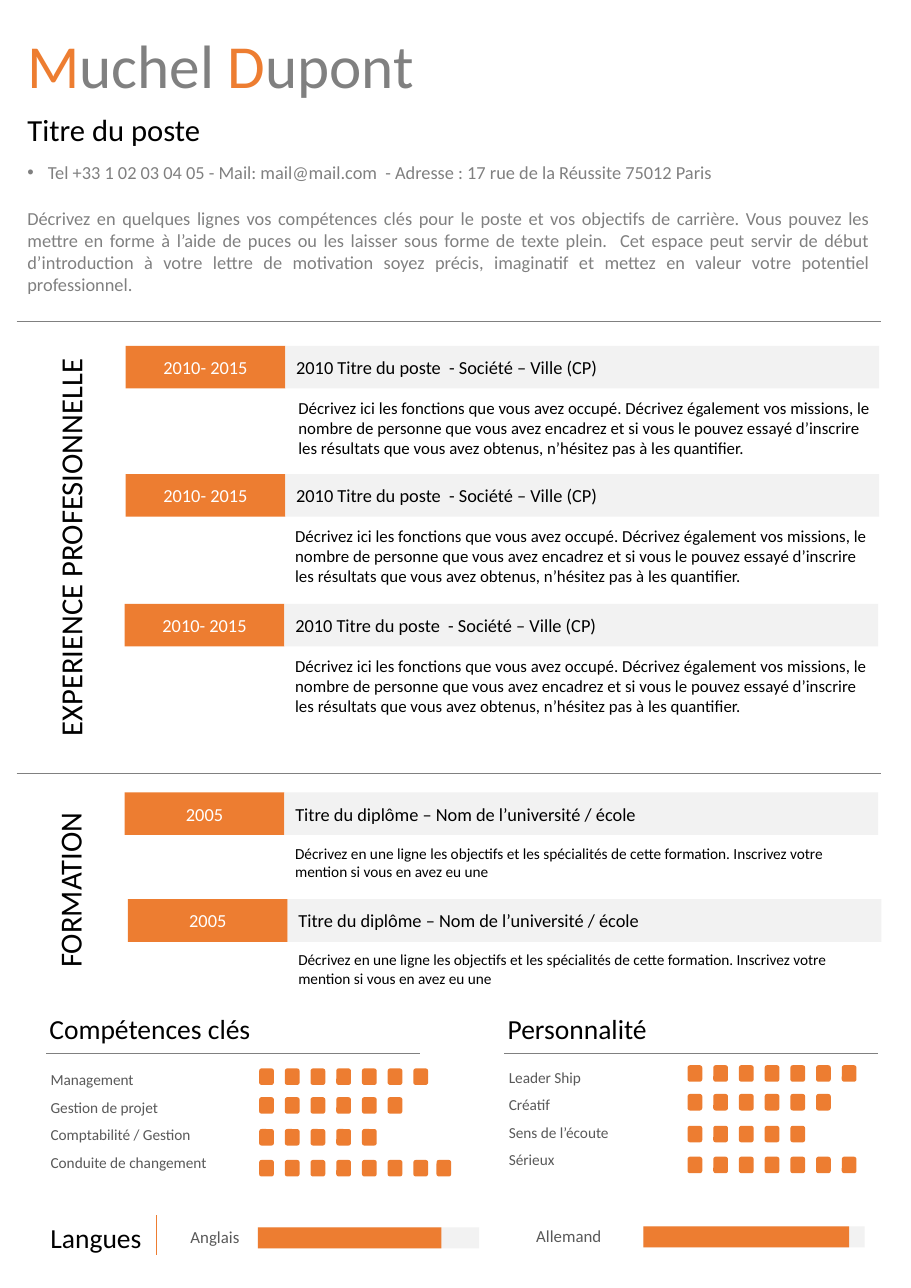
from dataclasses import dataclass

from lxml.etree import SubElement
from pptx import Presentation
from pptx.dml.color import RGBColor
from pptx.enum.shapes import MSO_CONNECTOR, MSO_SHAPE
from pptx.enum.text import MSO_ANCHOR, PP_ALIGN
from pptx.oxml.ns import qn
from pptx.shapes.autoshape import Shape
from pptx.text.text import _Paragraph as Paragraph
from pptx.util import Pt

ORANGE = RGBColor(0xED, 0x7D, 0x31)
PALE = RGBColor(0xF2, 0xF2, 0xF2)
GREY = RGBColor(0x80, 0x80, 0x80)
DARK_GREY = RGBColor(0x59, 0x59, 0x59)
BLACK = RGBColor(0, 0, 0)
WHITE = RGBColor(0xFF, 0xFF, 0xFF)
FONT = "Calibri"

DATE_WIDTH, TITLE_WIDTH, BAND_HEIGHT = 104.4, 388.1, 27.9
DETAIL_DROP = 30.1
DOT_WIDTH, DOT_HEIGHT = 9.6, 10.8
DOT_COLUMNS = [16.8 * i for i in range(7)] + [115.9]
DOT_ROWS = [0, 18.8, 39.6, 59.8]
LANGUAGE_WIDTH, LANGUAGE_HEIGHT = 144.7, 13.7

JOB_TITLE = "2010 Titre du poste  - Société – Ville (CP)"
JOB_DETAIL = (
    "Décrivez ici les fonctions que vous avez occupé. Décrivez également vos missions, "
    "le nombre de personne que vous avez encadrez et si vous le pouvez essayé d’inscrire "
    "les résultats que vous avez obtenus, n’hésitez pas à les quantifier."
)
DEGREE_TITLE = "Titre du diplôme – Nom de l’université / école"
DEGREE_DETAIL = (
    "Décrivez en une ligne les objectifs et les spécialités de cette formation. "
    "Inscrivez votre mention si vous en avez eu une"
)
PROFILE = (
    "Décrivez en quelques lignes vos compétences clés pour le poste et vos objectifs de "
    "carrière. Vous pouvez les mettre en forme à l’aide de puces ou les laisser sous forme "
    "de texte plein.  Cet espace peut servir de début d’introduction à votre lettre de "
    "motivation soyez précis, imaginatif et mettez en valeur votre potentiel professionnel."
)


@dataclass
class Entry:
    period: str
    title: str
    detail: str
    detail_size: float
    left: float
    top: float
    detail_left: float


@dataclass
class SkillPanel:
    heading: str
    left: float
    labels_top: float
    dots_left: float
    dots_top: float
    scores: dict[str, int]


@dataclass
class Language:
    name: str
    label_left: float
    bar_left: float
    bar_top: float
    level: float


ENTRIES = [
    Entry("2010- 2015", JOB_TITLE, JOB_DETAIL, 11, 82.1, 226, 187.9),
    Entry("2010- 2015", JOB_TITLE, JOB_DETAIL, 11, 82.1, 309.8, 185.8),
    Entry("2010- 2015", JOB_TITLE, JOB_DETAIL, 11, 81.5, 394.6, 185.8),
    Entry("2005", DEGREE_TITLE, DEGREE_DETAIL, 10, 81.5, 517.8, 185.8),
    Entry("2005", DEGREE_TITLE, DEGREE_DETAIL, 10, 83.6, 587.6, 187.9),
]
PANELS = [
    SkillPanel("Compétences clés", 25.2, 689.8, 169.4, 698.2, {
        "Management": 7, "Gestion de projet": 6,
        "Comptabilité / Gestion": 5, "Conduite de changement": 8}),
    SkillPanel("Personnalité", 324.7, 688.3, 449.4, 696.1, {
        "Leader Ship": 7, "Créatif": 6, "Sens de l’écoute": 5, "Sérieux": 7}),
]
LANGUAGES = [
    Language("Anglais", 117.4, 168.5, 802.1, 0.83),
    Language("Allemand", 343.4, 420.5, 801.4, 0.93),
]

prs = Presentation()
prs.slide_width, prs.slide_height = Pt(595.44), Pt(841.68)
slide = prs.slides.add_slide(prs.slide_layouts[6])


def style(paragraph: Paragraph, size: float, color: RGBColor) -> None:
    paragraph.font.name = FONT
    paragraph.font.size = Pt(size)
    paragraph.font.color.rgb = color


def add_text(text: str, left: float, top: float, width: float, height: float,
             size: float, color: RGBColor = BLACK, wrap: bool = True) -> Shape:
    box = slide.shapes.add_textbox(Pt(left), Pt(top), Pt(width), Pt(height))
    box.text_frame.word_wrap = wrap
    box.text_frame.text = text
    for paragraph in box.text_frame.paragraphs:
        style(paragraph, size, color)
    return box


def add_block(left: float, top: float, width: float, height: float, fill: RGBColor,
              kind: MSO_SHAPE = MSO_SHAPE.RECTANGLE) -> Shape:
    block = slide.shapes.add_shape(kind, Pt(left), Pt(top), Pt(width), Pt(height))
    block.shadow.inherit = False
    block.fill.solid()
    block.fill.fore_color.rgb = fill
    block.line.fill.background()
    return block


def add_band(text: str, left: float, top: float, width: float, fill: RGBColor,
             color: RGBColor, align: PP_ALIGN) -> None:
    frame = add_block(left, top, width, BAND_HEIGHT, fill).text_frame
    frame.text = text
    frame.word_wrap = True
    frame.vertical_anchor = MSO_ANCHOR.MIDDLE
    frame.paragraphs[0].alignment = align
    style(frame.paragraphs[0], 12, color)


def add_rule(x1: float, y1: float, x2: float, y2: float, color: RGBColor, width: float) -> None:
    rule = slide.shapes.add_connector(MSO_CONNECTOR.STRAIGHT, Pt(x1), Pt(y1), Pt(x2), Pt(y2))
    rule.line.color.rgb = color
    rule.line.width = Pt(width)
    SubElement(rule._element.spPr, qn("a:effectLst"))


def add_side_heading(text: str, left: float, top: float, width: float) -> None:
    heading = add_text(text, left, top, width, 31.7, 20)
    heading.rotation = 270
    heading.text_frame.paragraphs[0].alignment = PP_ALIGN.CENTER


def add_entry(entry: Entry) -> None:
    add_band(entry.period, entry.left, entry.top, DATE_WIDTH, ORANGE, WHITE, PP_ALIGN.CENTER)
    add_band(entry.title, entry.left + DATE_WIDTH, entry.top, TITLE_WIDTH, PALE, BLACK,
             PP_ALIGN.LEFT)
    add_text(entry.detail, entry.detail_left, entry.top + DETAIL_DROP, TITLE_WIDTH, 54,
             entry.detail_size)


def add_panel(panel: SkillPanel) -> None:
    add_text(panel.heading, panel.left, 658.1, 181.4, 28.8, 18)
    add_rule(panel.left + 5, 688.3, panel.left + 249.1, 688.3, GREY, 0.5)
    labels = add_text("\n".join(panel.scores), panel.left + 0.8, panel.labels_top,
                      164.9, 84.2, 10, DARK_GREY)
    for paragraph in labels.text_frame.paragraphs:
        paragraph.line_spacing = 1.5
    for row, score in zip(DOT_ROWS, panel.scores.values()):
        for column in DOT_COLUMNS[:score]:
            add_block(panel.dots_left + column, panel.dots_top + row, DOT_WIDTH, DOT_HEIGHT,
                      ORANGE, MSO_SHAPE.ROUNDED_RECTANGLE)


def add_language(language: Language) -> None:
    add_text(language.name, language.label_left, language.bar_top - 4.3, 64.8, 20.9, 11, DARK_GREY)
    for share, fill in ((1, PALE), (language.level, ORANGE)):
        add_block(language.bar_left, language.bar_top, LANGUAGE_WIDTH * share,
                  LANGUAGE_HEIGHT, fill)


# Name, contact details and profile
full_name = add_text("", 10.8, 14.4, 415.4, 55.4, 40).text_frame.paragraphs[0]
for letters, color in (("M", ORANGE), ("uchel ", GREY), ("D", ORANGE), ("upont", GREY)):
    run = full_name.add_run()
    run.text = letters
    run.font.color.rgb = color
add_text("Titre du poste", 10.8, 69.1, 131, 31.7, 20, wrap=False)
contact = add_text("", 10.8, 101.5, 545, 21.6, 12).text_frame.paragraphs[0]
contact.text = "Tel +33 1 02 03 04 05 - Mail: mail@mail.com  - Adresse : 17 rue de la Réussite 75012 Paris"
contact_format = contact._p.get_or_add_pPr()
contact_format.set("marL", str(Pt(13.5)))
contact_format.set("indent", str(-Pt(13.5)))
contact_format.remove_all("a:defRPr")
SubElement(contact_format, qn("a:buFont"), typeface="Arial")
SubElement(contact_format, qn("a:buChar"), char="•")
style(contact, 12, GREY)
profile = add_text(PROFILE, 10.8, 131.8, 565.2, 65.5, 12, GREY)
profile.text_frame.paragraphs[0].alignment = PP_ALIGN.JUSTIFY

# Experience and education
for divider_y in (210, 505.2):
    add_rule(10.8, divider_y, 576, divider_y, GREY, 0.5)
add_side_heading("EXPERIENCE PROFESIONNELLE", -95, 342, 282.2)
add_side_heading("FORMATION", -21.6, 565.9, 134.6)
for job_or_degree in ENTRIES:
    add_entry(job_or_degree)

# Skills and personality
for skill_panel in PANELS:
    add_panel(skill_panel)

# Languages
add_text("Langues", 25.9, 794.2, 77, 28.8, 18)
add_rule(102.2, 794.2, 102.2, 820.1, ORANGE, 1)
for spoken in LANGUAGES:
    add_language(spoken)

prs.save("out.pptx")
